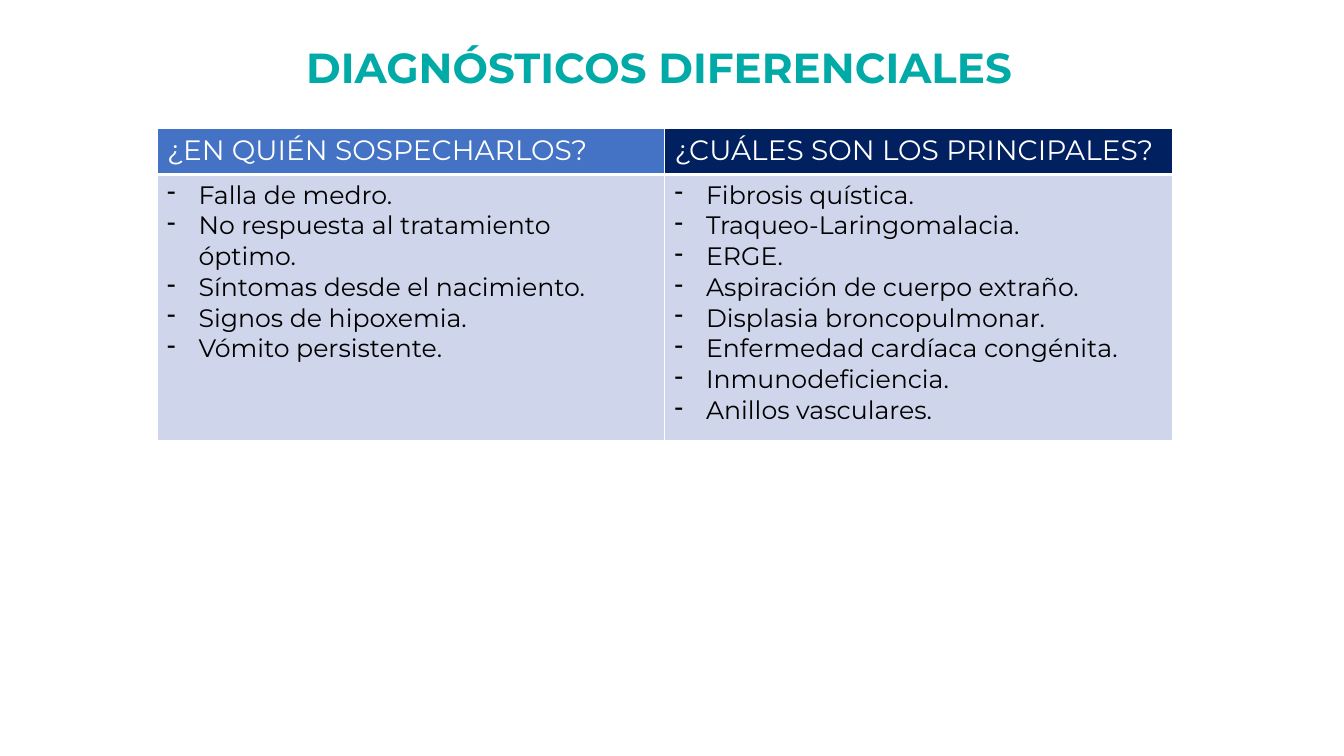
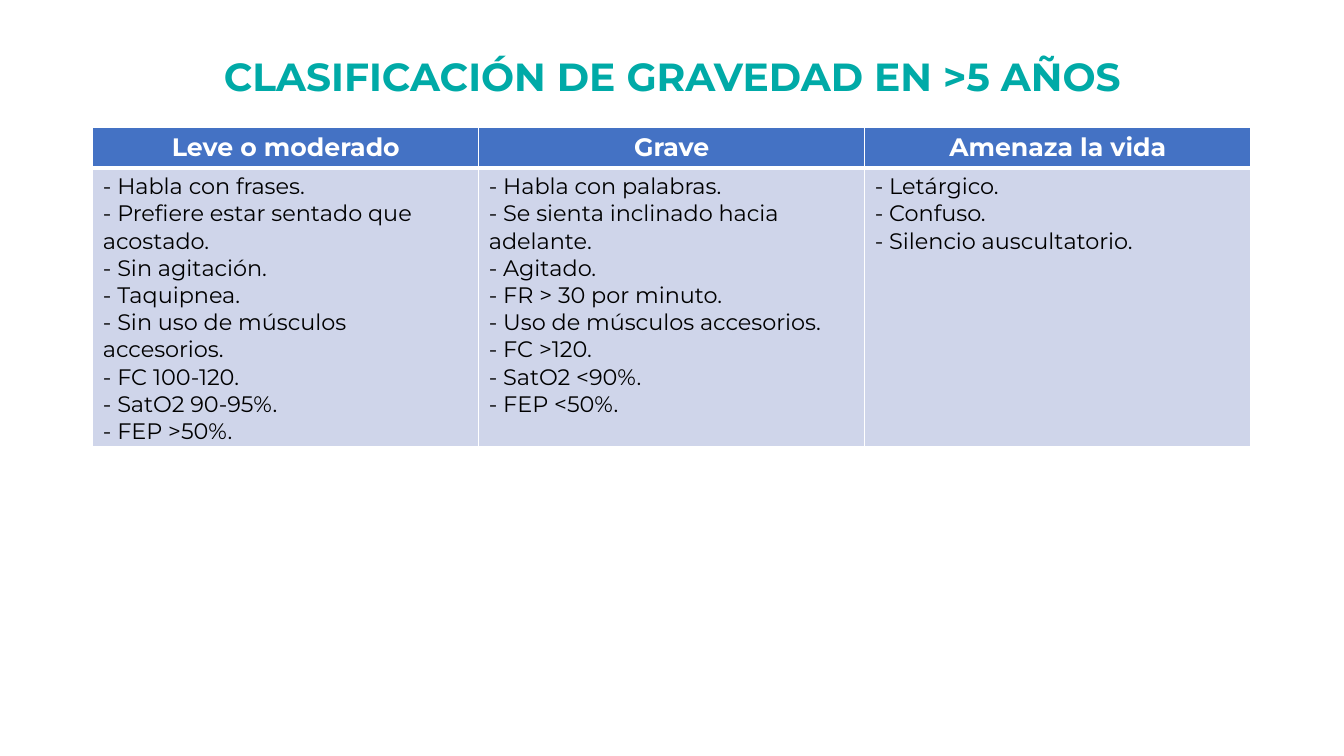
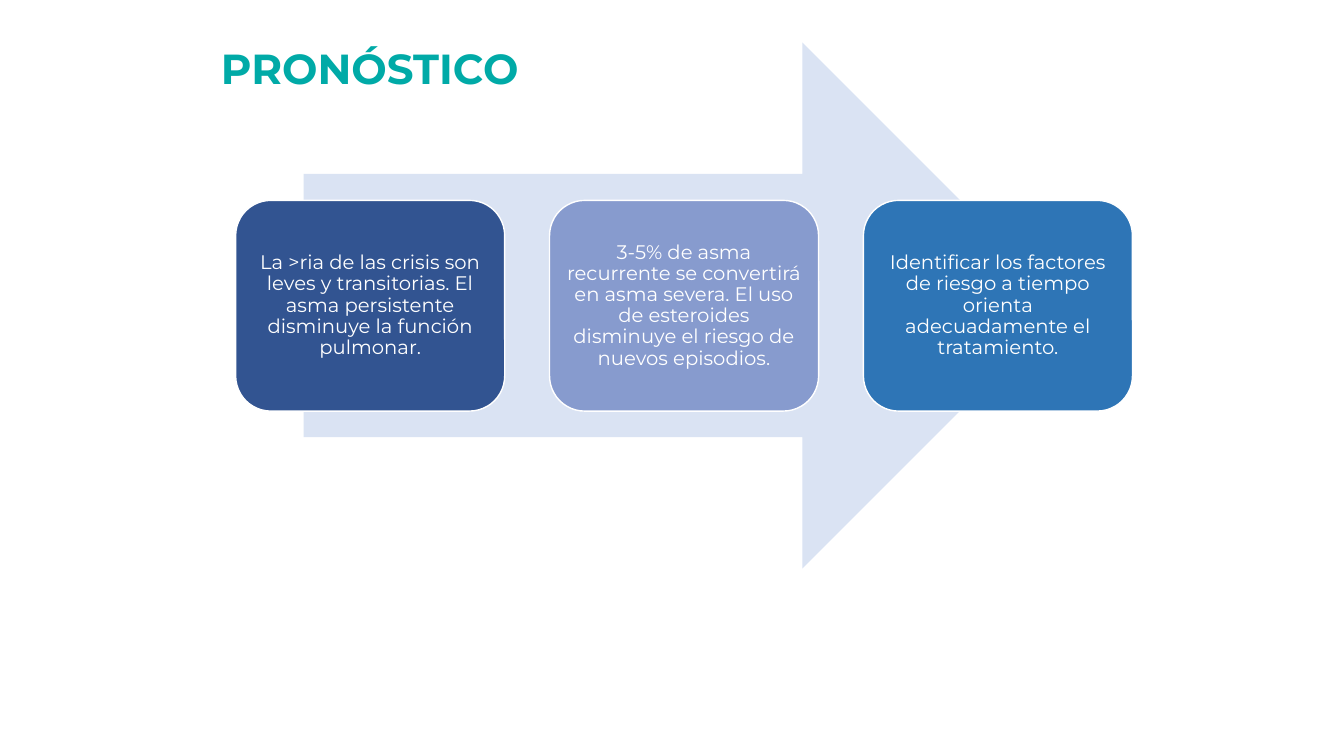
from lxml.etree import SubElement
from pptx import Presentation
from pptx.dml.color import RGBColor
from pptx.enum.shapes import MSO_SHAPE
from pptx.enum.text import MSO_ANCHOR, MSO_AUTO_SIZE, PP_ALIGN
from pptx.oxml.ns import qn
from pptx.util import Cm, Pt

FONT = "Montserrat"
TEAL, WHITE, BLACK = "00AAA7", "FFFFFF", "000000"
HEADER_BLUE, NAVY, CELL_BLUE = "4472C4", "002060", "CFD5EA"
ARROW_BLUE = "DAE3F3"
TITLE_ONLY = 5


def rgb(color):
    return RGBColor.from_string(color)


def add_dash(p):
    """Give a paragraph a hanging dash bullet."""
    pPr = p._p.get_or_add_pPr()
    pPr.set("marL", str(Cm(0.79)))
    pPr.set("indent", str(-Cm(0.79)))
    SubElement(pPr, qn("a:buChar"), char="-")


def write(tf, text, size=18, color=BLACK, bold=False, align=PP_ALIGN.LEFT,
          spacing=1.0, dashes=False):
    """Fill a text frame, one paragraph per line of text."""
    for i, line in enumerate(text.split("\n")):
        p = tf.add_paragraph() if i else tf.paragraphs[0]
        if dashes:
            add_dash(p)
        p.alignment = align
        p.line_spacing = spacing
        r = p.add_run()
        r.text = line
        r.font.name = FONT
        r.font.size = Pt(size)
        r.font.bold = bold
        r.font.color.rgb = rgb(color)


def set_borders(cell, top, bottom):
    """Draw white cell borders; top and bottom are widths in points."""
    tcPr = cell._tc.get_or_add_tcPr()
    for side, width in (("L", 1), ("R", 1), ("T", top), ("B", bottom)):
        ln = SubElement(tcPr, qn(f"a:ln{side}"), w=str(Pt(width)))
        fill = SubElement(ln, qn("a:solidFill"))
        SubElement(fill, qn("a:srgbClr"), val=WHITE)


class Deck:
    """Holds the presentation and the slide being built; lengths are in cm."""

    def __init__(self):
        self.prs = Presentation()
        self.prs.slide_width = Cm(33.87)
        self.prs.slide_height = Cm(19.05)
        self.slide = None

    def new_slide(self, title, left, top, width=27.38, size=30):
        layout = self.prs.slide_layouts[TITLE_ONLY]
        self.slide = self.prs.slides.add_slide(layout)
        sp = self.slide.shapes.title
        sp.left, sp.top, sp.width, sp.height = map(Cm, (left, top, width, 1.55))
        tf = sp.text_frame
        tf.word_wrap = True
        tf.auto_size = MSO_AUTO_SIZE.NONE
        tf.vertical_anchor = MSO_ANCHOR.TOP
        write(tf, title, size=size, color=TEAL, bold=True, align=PP_ALIGN.CENTER)

    def table(self, columns, left, top, width, heights, head, body):
        """Columns are (heading, fill, text); head and body are text formats."""
        frame = self.slide.shapes.add_table(
            2, len(columns), Cm(left), Cm(top), Cm(width), Cm(sum(heights)))
        table = frame.table
        for row, height in zip(table.rows, heights):
            row.height = Cm(height)
        for i, (heading, fill, text) in enumerate(columns):
            self.cell(table.cell(0, i), heading, fill, 1, 3, color=WHITE, **head)
            cell = table.cell(1, i)
            cell.margin_bottom = 0
            self.cell(cell, text, CELL_BLUE, 3, 1, **body)

    def cell(self, cell, text, fill, top, bottom, **style):
        set_borders(cell, top, bottom)
        cell.fill.solid()
        cell.fill.fore_color.rgb = rgb(fill)
        write(cell.text_frame, text, **style)

    def shape(self, kind, left, top, width, height, fill, line=None):
        sp = self.slide.shapes.add_shape(
            kind, Cm(left), Cm(top), Cm(width), Cm(height))
        sp.shadow.inherit = False
        sp.fill.solid()
        sp.fill.fore_color.rgb = rgb(fill)
        if line:
            sp.line.color.rgb = rgb(line)
            sp.line.width = Pt(1)
        else:
            sp.line.fill.background()
        return sp

    def card(self, text, left, top, width, height, fill):
        sp = self.shape(MSO_SHAPE.ROUNDED_RECTANGLE, left, top, width, height,
                        fill, line=WHITE)
        tf = sp.text_frame
        tf.word_wrap = True
        tf.vertical_anchor = MSO_ANCHOR.MIDDLE
        tf.margin_left = tf.margin_right = Cm(0.15)
        tf.margin_top = tf.margin_bottom = Cm(0.15)
        write(tf, text, size=14, color=WHITE, align=PP_ALIGN.CENTER, spacing=0.9)


def add_diagnoses(deck):
    deck.new_slide("DIAGNÓSTICOS DIFERENCIALES", 2.92, 0.91)
    columns = [
        ("¿EN QUIÉN SOSPECHARLOS?", HEADER_BLUE,
         "Falla de medro.\n"
         "No respuesta al tratamiento óptimo.\n"
         "Síntomas desde el nacimiento.\n"
         "Signos de hipoxemia.\n"
         "Vómito persistente."),
        ("¿CUÁLES SON LOS PRINCIPALES?", NAVY,
         "Fibrosis quística.\n"
         "Traqueo-Laringomalacia.\n"
         "ERGE.\n"
         "Aspiración de cuerpo extraño.\n"
         "Displasia broncopulmonar.\n"
         "Enfermedad cardíaca congénita.\n"
         "Inmunodeficiencia.\n"
         "Anillos vasculares."),
    ]
    deck.table(columns, 3.96, 3.23, 25.58, (1.17, 6.71),
               head={"size": 20}, body={"size": 18, "dashes": True})


def add_severity(deck):
    deck.new_slide("CLASIFICACIÓN DE GRAVEDAD EN >5 AÑOS", 3.25, 1.19, size=28)
    columns = [
        ("Leve o moderado", HEADER_BLUE,
         "- Habla con frases.\n"
         "- Prefiere estar sentado que acostado.\n"
         "- Sin agitación.\n"
         "- Taquipnea.\n"
         "- Sin uso de músculos accesorios.\n"
         "- FC 100-120.\n"
         "- SatO2 90-95%.\n"
         "- FEP >50%."),
        ("Grave", HEADER_BLUE,
         "- Habla con palabras.\n"
         "- Se sienta inclinado hacia adelante.\n"
         "- Agitado.\n"
         "- FR > 30 por minuto.\n"
         "- Uso de músculos accesorios.\n"
         "- FC >120.\n"
         "- SatO2 <90%.\n"
         "- FEP <50%."),
        ("Amenaza la vida", HEADER_BLUE,
         "- Letárgico.\n"
         "- Confuso.\n"
         "- Silencio auscultatorio."),
    ]
    deck.table(columns, 2.34, 3.2, 29.18, (1.02, 7.03),
               head={"size": 18, "bold": True, "align": PP_ALIGN.CENTER},
               body={"size": 16})


def add_prognosis(deck):
    deck.new_slide("PRONÓSTICO", 4.75, 0.94, width=9.14)
    deck.shape(MSO_SHAPE.RIGHT_ARROW, 7.65, 1.07, 19.2, 13.26, ARROW_BLUE)
    cards = [
        ("325491", "La >ria de las crisis son leves y transitorias. El asma "
                   "persistente disminuye la función pulmonar."),
        ("879BCE", "3-5% de asma recurrente se convertirá en asma severa. El uso "
                   "de esteroides disminuye el riesgo de nuevos episodios."),
        ("2E75B6", "Identificar los factores de riesgo a tiempo orienta "
                   "adecuadamente el tratamiento."),
    ]
    width, gap = 6.78, 1.13
    for i, (fill, text) in enumerate(cards):
        deck.card(text, 5.94 + i * (width + gap), 5.05, width, 5.31, fill)


def main():
    deck = Deck()
    add_diagnoses(deck)
    add_severity(deck)
    add_prognosis(deck)
    deck.prs.save("out.pptx")


if __name__ == "__main__":
    main()
